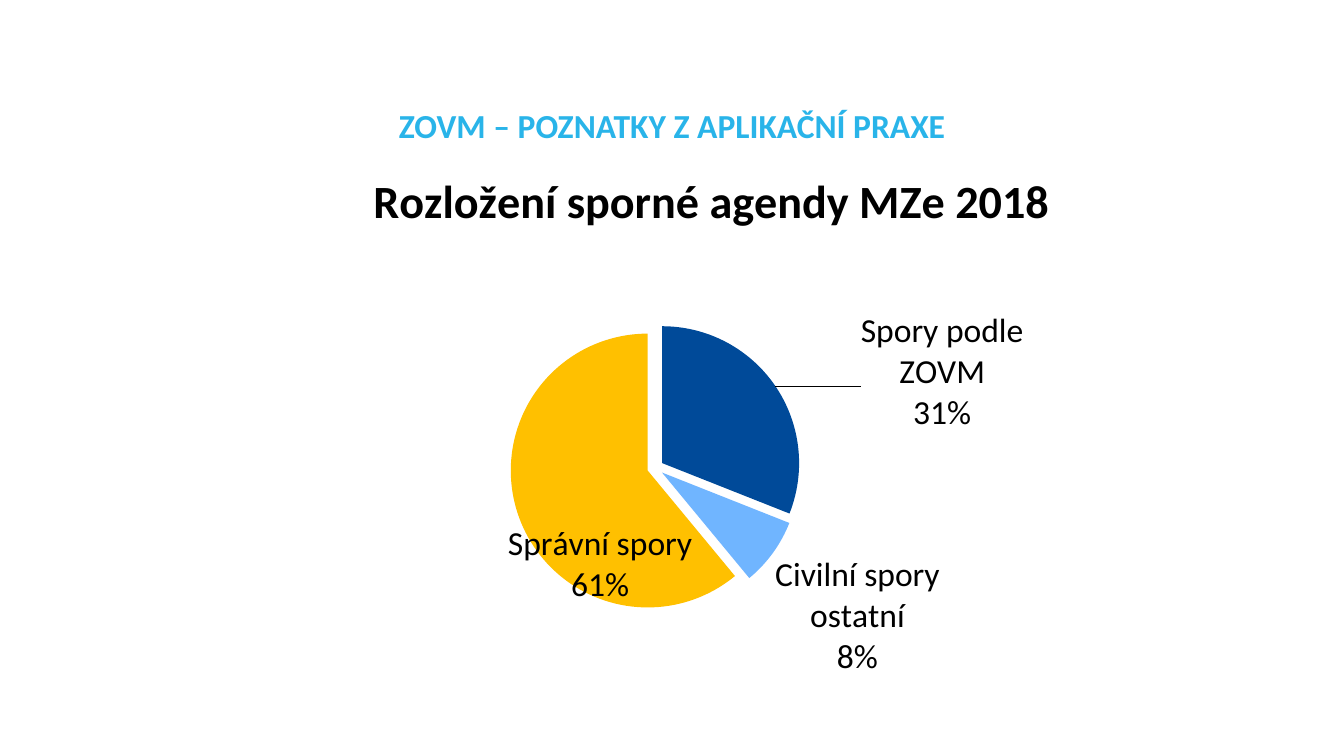
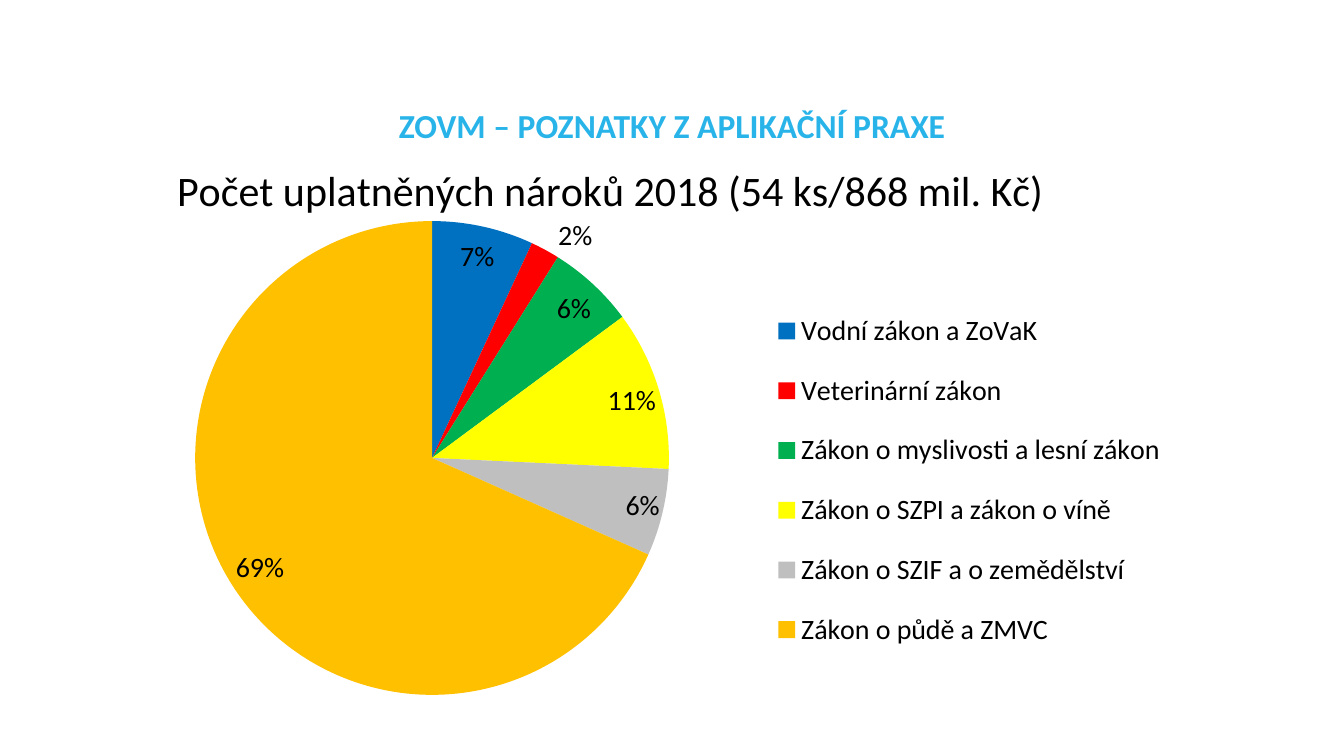
from lxml.etree import Element, SubElement
from pptx import Presentation
from pptx.chart.data import CategoryChartData
from pptx.dml.color import RGBColor
from pptx.enum.chart import XL_CHART_TYPE, XL_LABEL_POSITION, XL_LEGEND_POSITION
from pptx.enum.text import MSO_ANCHOR, MSO_AUTO_SIZE, PP_ALIGN
from pptx.oxml.ns import qn
from pptx.util import Pt

SCALE = 9144
FACE = "Calibri"
HEAD = "ZOVM – POZNATKY Z APLIKAČNÍ PRAXE"
COLORS = {
    "sky": "29B4E9", "black": "000000", "navy": "004A99", "light": "70B5FF",
    "gold": "FFC000", "blue": "0070C0", "red": "FF0000", "green": "00B050",
    "yellow": "FFFF00", "grey": "BFBFBF",
}


def px(*sizes):
    return [size * SCALE for size in sizes]


def place(node, index, values, inner=False, edge=True):
    for old in node.findall(qn("c:layout")):
        node.remove(old)
    layout = Element(qn("c:layout"))
    manual = SubElement(layout, qn("c:manualLayout"))
    if inner:
        SubElement(manual, qn("c:layoutTarget"), val="inner")
    if edge:
        for mode in ("xMode", "yMode"):
            SubElement(manual, qn("c:" + mode), val="edge")
    for name, value in zip("xywh", values):
        SubElement(manual, qn("c:" + name), val=str(value))
    node.insert(index, layout)


class Deck:
    def __init__(self):
        self.show = Presentation()
        self.show.slide_width, self.show.slide_height = px(2667, 1500)
        self.slide = None

    def style(self, font, size, color="black", bold=False):
        font.name, font.size, font.bold = FACE, Pt(size), bold
        font.color.rgb = RGBColor.from_string(COLORS[color])

    def page(self):
        self.slide = self.show.slides.add_slide(self.show.slide_layouts[5])
        title = self.slide.shapes.title
        title.left, title.top, title.width, title.height = px(137, 217, 2394, 134)
        frame = title.text_frame
        frame.text = HEAD
        frame.auto_size = MSO_AUTO_SIZE.NONE
        frame.word_wrap = True
        frame.vertical_anchor = MSO_ANCHOR.TOP
        frame.margin_left = frame.margin_right = 0
        frame.margin_top = frame.margin_bottom = 0
        line = frame.paragraphs[0]
        line.alignment = PP_ALIGN.CENTER
        line.line_spacing = 0.9
        self.style(line.runs[0].font, 48, "sky", True)

    def pie(self, box, parts, area, form="General"):
        data = CategoryChartData(number_format=form)
        data.categories = [name for name, _, _ in parts]
        data.add_series("Series 1", [value for _, value, _ in parts])
        chart = self.slide.shapes.add_chart(XL_CHART_TYPE.PIE, *px(*box), data).chart
        self.style(chart.font, 10)
        chart.has_legend = False
        chart.plots[0].vary_by_categories = True
        points = chart.plots[0].series[0].points
        for index, (_, _, color) in enumerate(parts):
            fill = points[index].format.fill
            fill.solid()
            fill.fore_color.rgb = RGBColor.from_string(COLORS[color])
        place(chart.element.xpath("//c:plotArea")[0], 0, area, inner=True)
        return chart

    def name(self, chart, text, size, spot, bold=False):
        chart.has_title = True
        title = chart.chart_title
        title.text_frame.text = text
        self.style(title.text_frame.paragraphs[0].runs[0].font, size, bold=bold)
        place(chart.element.xpath("//c:chart/c:title")[0], 1, spot)

    def split(self, chart, size):
        series = chart.element.xpath("//c:ser")[0]
        gap = Element(qn("c:explosion"), val=str(size))
        series.find(qn("c:dPt")).addprevious(gap)

    def label(self, chart, size, spot, shown, extra):
        series = chart.plots[0].series[0]
        labels = series.data_labels
        self.style(labels.font, size)
        labels.position = spot
        for index, (where, shift) in extra.items():
            label = series.points[index].data_label
            self.style(label.font, size)
            label.position = where
            node = chart.element.xpath(f"//c:dLbl[c:idx/@val='{index}']")[0]
            place(node, 1, shift, edge=False)
        for tag in ("showVal", "showCatName", "showPercent", "showLeaderLines"):
            for node in chart.element.xpath(f"//c:ser//c:{tag}"):
                node.set("val", "1" if tag in shown else "0")
        if "showCatName" in shown:
            for node in chart.element.xpath("//c:ser//c:showBubbleSize"):
                mark = Element(qn("c:separator"))
                mark.text = "\n"
                node.addnext(mark)

    def legend(self, chart, size, area):
        chart.has_legend = True
        chart.legend.position = XL_LEGEND_POSITION.RIGHT
        chart.legend.include_in_layout = False
        self.style(chart.legend.font, size)
        place(chart.element.xpath("//c:legend")[0], 1, area)


def main():
    deck = Deck()
    outer, inner = XL_LABEL_POSITION.OUTSIDE_END, XL_LABEL_POSITION.INSIDE_END

    deck.page()
    agenda = deck.pie((231, 318, 2057, 1080), [
        ("Spory podle ZOVM", 31, "navy"),
        ("Civilní spory ostatní", 8, "light"),
        ("Správní spory", 61, "gold"),
    ], (0.38, 0.29, 0.28, 0.55))
    deck.name(agenda, "Rozložení sporné agendy MZe 2018", 66, (0.24, -0.01), True)
    deck.split(agenda, 6)
    deck.label(agenda, 48, outer, ("showCatName", "showPercent", "showLeaderLines"), {
        0: (outer, (0.08, 0.09)),
        2: (outer, (0.17, 0.01)),
    })

    deck.page()
    claims = deck.pie((151, 306, 2316, 1106), [
        ("Vodní zákon a ZoVaK", 7, "blue"),
        ("Veterinární zákon", 2, "red"),
        ("Zákon o myslivosti a lesní zákon", 6, "green"),
        ("Zákon o SZPI a zákon o víně", 11, "yellow"),
        ("Zákon o SZIF a o zemědělství", 6, "grey"),
        ("Zákon o půdě a ZMVC", 69, "gold"),
    ], (0.08, 0.12, 0.45, 0.85), '0"%"')
    deck.name(claims, "Počet uplatněných nároků 2018 (54 ks/868 mil. Kč)", 60, (0.08, -0.01))
    deck.label(claims, 40, inner, ("showVal",), {
        0: (inner, (0.01, 0.02)),
        1: (outer, (0.01, 0.01)),
        2: (inner, (0, 0.01)),
        3: (inner, (0, -0.01)),
        4: (inner, (0, 0.02)),
    })
    deck.legend(claims, 40, (0.57, 0.24, 0.39, 0.69))

    deck.show.save("out.pptx")


if __name__ == "__main__":
    main()
